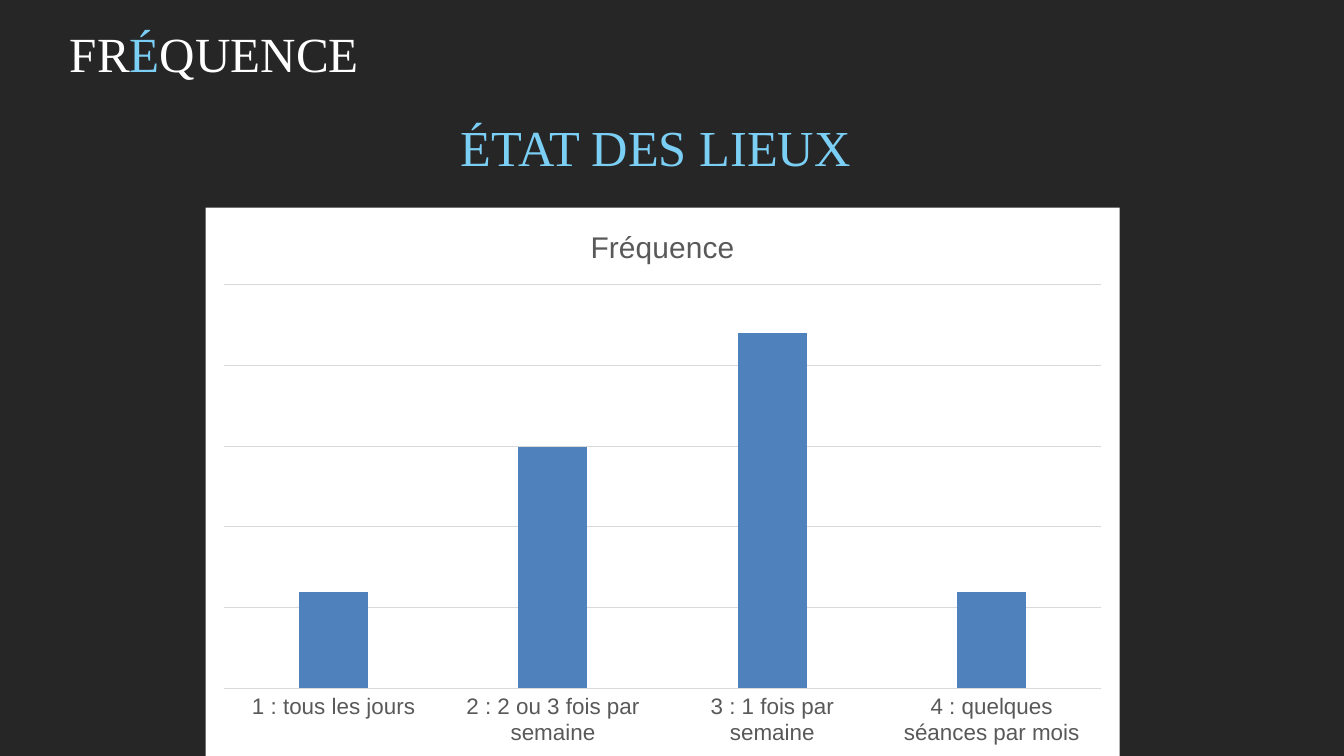
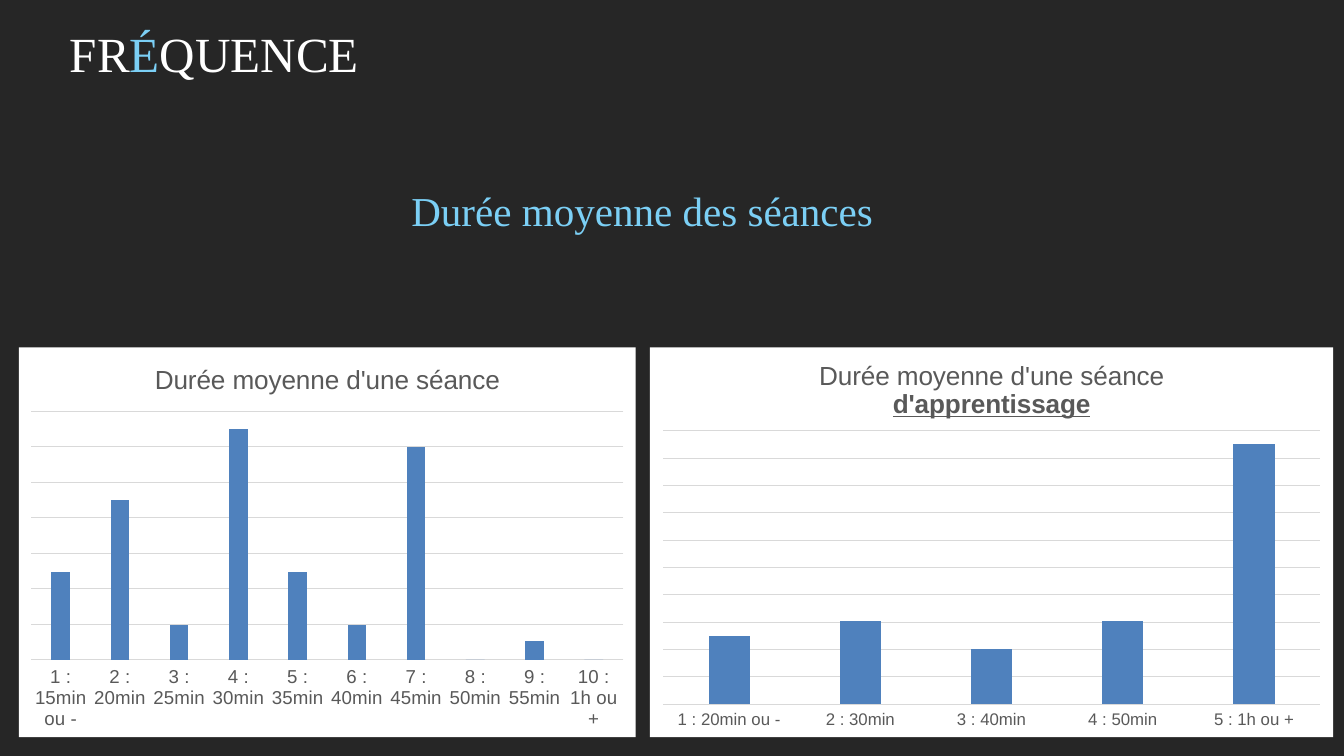
from dataclasses import dataclass
from lxml import etree
from pptx import Presentation
from pptx.chart.data import CategoryChartData
from pptx.dml.color import RGBColor as RGB
from pptx.enum.chart import XL_CHART_TYPE as CT, XL_TICK_LABEL_POSITION as TLP, XL_TICK_MARK as TM
from pptx.enum.text import MSO_ANCHOR as ANCHOR, MSO_AUTO_SIZE as FIT, PP_ALIGN as ALIGN
from pptx.oxml.ns import nsdecls, qn
from pptx.util import Inches, Pt


@dataclass(frozen=True)
class Theme:
    dark: RGB = RGB.from_string("262626")
    white: RGB = RGB.from_string("FFFFFF")
    sky: RGB = RGB.from_string("7BCFF5")
    bar: RGB = RGB.from_string("4F81BD")
    label: RGB = RGB.from_string("595959")
    grid: RGB = RGB.from_string("D9D9D9")
    serif: str = "Times New Roman"
    sans: str = "Arial"
    title: float = 52.6
    chart: float = 10
    hairline: float = 0.75


T = Theme()
prs = Presentation()
prs.slide_width, prs.slide_height = Inches(20), Inches(11.25)
prs.slide_master.background.fill.solid()
prs.slide_master.background.fill.fore_color.rgb = T.dark


def box(x, y, w, h):
    W, H = prs.slide_width / 100, prs.slide_height / 100
    return int(x * W), int(y * H), int(w * W), int(h * H)


def style(font, name, size, color):
    font.name, font.size, font.bold = name, Pt(size), False
    font.color.rgb = color


TITLE_BOX = box(4.3, 3.1, 90, 8.9)
TITLE_RUNS = [("FR", T.white), ("É", T.sky), ("QUENCE", T.white)]
PAIR_TOP, PAIR_HEIGHT = 45.96, 51.56

slides = [
    dict(heading="ÉTAT DES LIEUX", size=54, at=(33.4, 15.02, 76.35, 12.44), charts=[
        dict(at=(15.3, 27.47, 68, 72.53), title=["Fréquence"], title_size=32, label_size=24,
             peak=22, ceiling=25, steps=5,
             data={"1 : tous les jours": 27, "2 : 2 ou 3 fois par semaine": 68,
                   "3 : 1 fois par semaine": 100, "4 : quelques séances par mois": 27}),
    ]),
    dict(heading="Durée moyenne des séances", size=44, at=(29.7, 22.76, 56.25, 12.44), charts=[
        dict(at=(1.4, PAIR_TOP, 45.9, PAIR_HEIGHT), title=["Durée moyenne d'une séance"],
             title_size=28, label_size=20, peak=13, ceiling=14, steps=7,
             data={"1 : 15min ou -": 38, "2 : 20min": 69, "3 : 25min": 15, "4 : 30min": 100,
                   "5 : 35min": 38, "6 : 40min": 15, "7 : 45min": 92, "8 : 50min": 0,
                   "9 : 55min": 8, "10 : 1h ou +": 0}),
        dict(at=(48.35, PAIR_TOP, 50.85, PAIR_HEIGHT),
             title=["Durée moyenne d'une séance ", "d'apprentissage"],
             title_size=28, label_size=18, peak=19, ceiling=20, steps=10,
             data={"1 : 20min ou -": 26, "2 : 30min": 32, "3 : 40min": 21,
                   "4 : 50min": 32, "5 : 1h ou +": 100}),
    ]),
]

for page in slides:
    s = prs.slides.add_slide(prs.slide_layouts.get_by_name("Title Only"))
    heading = s.shapes.add_textbox(*box(*page["at"]))
    s.shapes.title.left, s.shapes.title.top, s.shapes.title.width, s.shapes.title.height = TITLE_BOX

    for sp in (s.shapes.title, heading):
        tf = sp.text_frame
        tf.word_wrap, tf.auto_size, tf.vertical_anchor = True, FIT.NONE, ANCHOR.MIDDLE
        tf.margin_left = tf.margin_right = Inches(0.18)
        tf.margin_top = tf.margin_bottom = Inches(0.09)

    p = s.shapes.title.text_frame.paragraphs[0]
    p.alignment, p.line_spacing = ALIGN.LEFT, 0.9
    style(p.font, T.serif, T.title, T.white)
    for text, color in TITLE_RUNS:
        r = p.add_run()
        r.text = text
        r.font.color.rgb = color

    p = heading.text_frame.paragraphs[0]
    p.text = page["heading"]
    p.line_spacing, p.space_after = Pt(34), Pt(12)
    style(p.font, T.serif, page["size"], T.sky)

    for c in page["charts"]:
        data = CategoryChartData()
        data.categories = list(c["data"])
        data.add_series("Series 1", list(c["data"].values()))
        chart = s.shapes.add_chart(CT.COLUMN_CLUSTERED, *box(*c["at"]), data).chart
        chart.has_legend = False
        chart.element.find(qn("c:chart")).addnext(etree.fromstring(
            f'<c:spPr {nsdecls("c", "a")}><a:solidFill><a:srgbClr val="{T.white}"/></a:solidFill>'
            '<a:ln><a:noFill/></a:ln></c:spPr>'))
        chart.font.name, chart.font.size = T.sans, Pt(T.chart)

        chart.has_title = True
        p = chart.chart_title.text_frame.paragraphs[0]
        style(p.font, T.sans, c["title_size"], T.label)
        for i, text in enumerate(c["title"]):
            r = p.add_run()
            r.text = text
            style(r.font, T.sans, c["title_size"], T.label)
            r.font.bold = r.font.underline = i > 0

        plot = chart.plots[0]
        plot.gap_width, plot.overlap, plot.vary_by_categories = 219, -27, False
        fill = plot.series[0].format.fill
        fill.solid()
        fill.fore_color.rgb = T.bar

        cat, val = chart.category_axis, chart.value_axis
        cat.major_tick_mark = cat.minor_tick_mark = TM.NONE
        cat.tick_label_position = TLP.LOW
        style(cat.tick_labels.font, T.sans, c["label_size"], T.label)
        val.visible, val.has_major_gridlines = False, True
        val.minimum_scale = 0
        val.major_unit = round(100 * c["ceiling"] / c["peak"] / c["steps"], 2)
        val.maximum_scale = round(val.major_unit * c["steps"], 2)
        for line in (cat.format.line, val.major_gridlines.format.line):
            line.color.rgb, line.width = T.grid, Pt(T.hairline)

prs.save("out.pptx")
